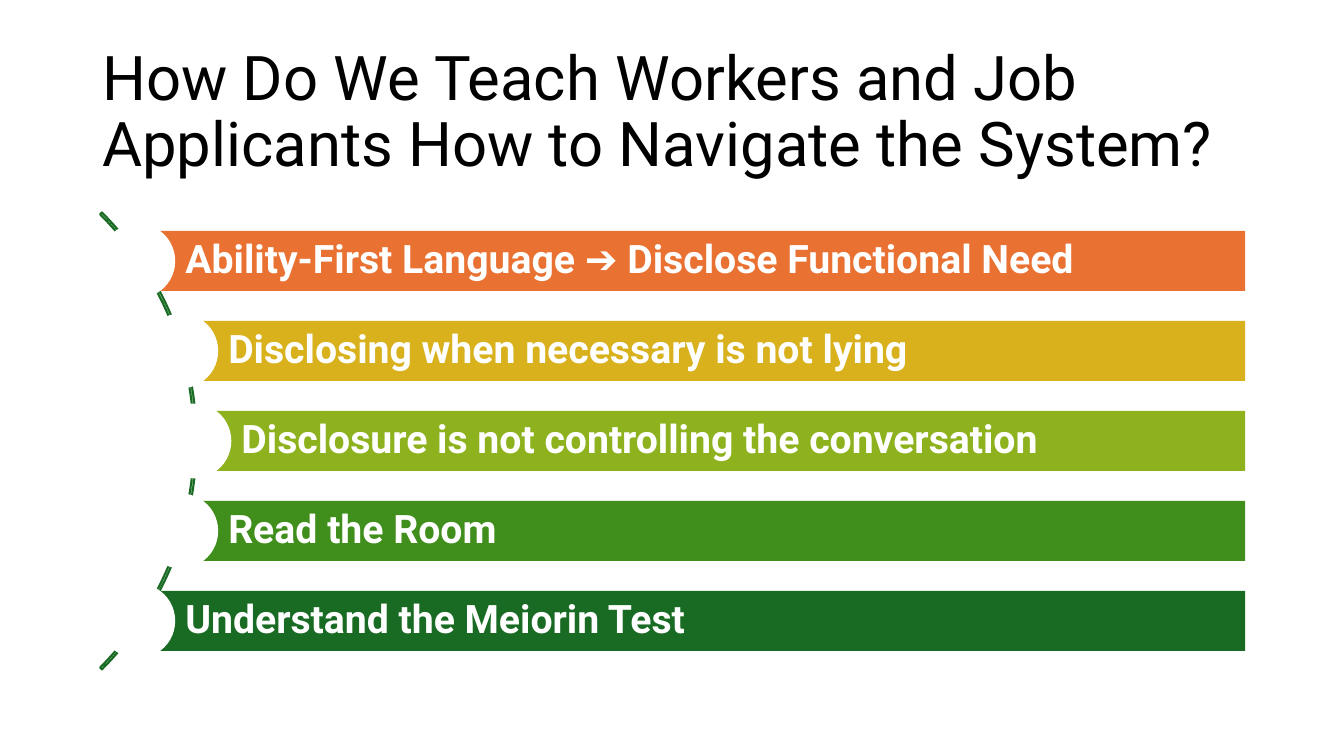
import pptx
import pptx.util
import pptx.dml.color
import pptx.enum.shapes
import pptx.enum.text

Pt = pptx.util.Pt
Kind = pptx.enum.shapes.MSO_SHAPE

# Content: text, bar left edge, bar colour
title = "How Do We Teach Workers and Job Applicants How to Navigate the System?"
bars = [
    ("Ability-First Language ➔ Disclose Functional Need", 98.4, "E97132"),
    ("Disclosing when necessary is not lying", 129.1, "D8B11D"),
    ("Disclosure is not controlling the conversation", 138.5, "8EB21E"),
    ("Read the Room", 129.1, "408E1C"),
    ("Understand the Meiorin Test", 98.4, "196B24"),
]

# Layout in points
right, top, step, high = 889.4, 165, 64.27, 42.85
dot = 53.5
arc = 461.5
arc_left = -321.1


def color(code):
    return pptx.dml.color.RGBColor.from_string(code)


def draw(slide, kind, left, top, width, height, fill=None):
    shape = slide.shapes.add_shape(kind, Pt(left), Pt(top), Pt(width), Pt(height))
    shape.shadow.inherit = False
    shape.line.fill.background()
    if fill:
        shape.fill.solid()
        shape.fill.fore_color.rgb = color(fill)
    else:
        shape.fill.background()
    return shape


def write(shape, text, size, code, bold, pads):
    frame = shape.text_frame
    frame.word_wrap = True
    frame.vertical_anchor = pptx.enum.text.MSO_ANCHOR.MIDDLE
    frame.margin_left, frame.margin_top, frame.margin_right, frame.margin_bottom = map(Pt, pads)
    para = frame.paragraphs[0]
    para.alignment = pptx.enum.text.PP_ALIGN.LEFT
    para.line_spacing = 0.9
    run = para.add_run()
    run.text = text
    run.font.name = "Roboto"
    run.font.size = Pt(size)
    run.font.bold = bold
    run.font.color.rgb = color(code)


def main():
    deck = pptx.Presentation()
    deck.slide_width, deck.slide_height = Pt(960), Pt(540)
    slide = deck.slides.add_slide(deck.slide_layouts[6])

    # Title
    box = slide.shapes.add_textbox(Pt(66), Pt(28.75), Pt(828), Pt(104.4))
    write(box, title, 44, "000000", False, (7.2, 3.6, 7.2, 3.6))

    # Arc centred on the stack of bars
    middle = top + (len(bars) - 1) * step / 2 + high / 2
    curve = draw(slide, Kind.BLOCK_ARC, arc_left, middle - arc / 2, arc, arc)
    for i, value in enumerate((189, 27, 0.004)):
        curve.adjustments[i] = value
    curve.line.color.rgb = color("196B24")
    curve.line.width = Pt(1.5)

    # Bars, each with a white dot centred on its left edge
    for i, (text, left, fill) in enumerate(bars):
        y = top + i * step
        bar = draw(slide, Kind.RECTANGLE, left, y, right - left, high, fill)
        write(bar, text, 28, "FFFFFF", True, (34, 5.6, 5.6, 5.6))
        draw(slide, Kind.OVAL, left - dot / 2, y + (high - dot) / 2, dot, dot, "FFFFFF")

    deck.save("out.pptx")


if __name__ == "__main__":
    main()
